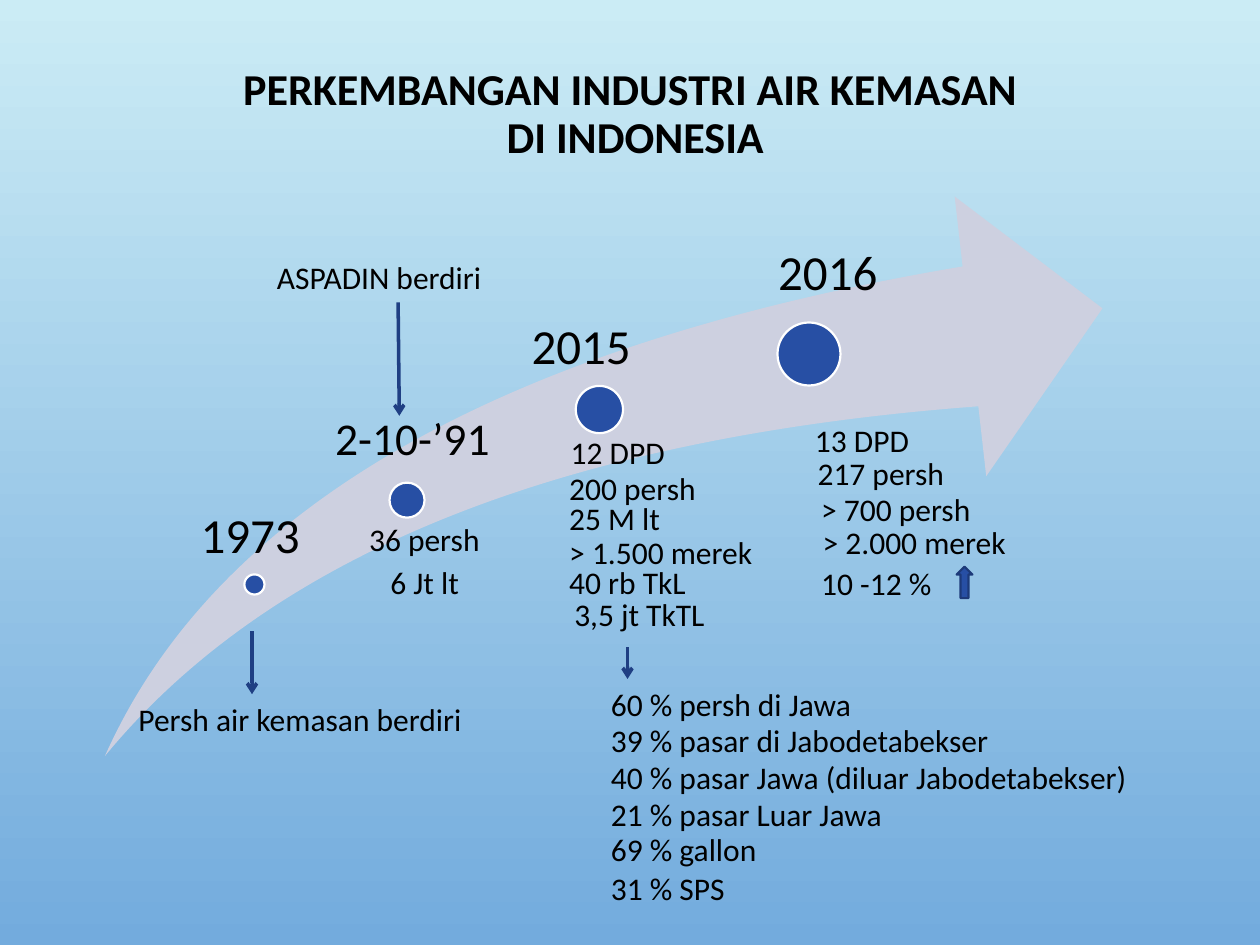
from dataclasses import dataclass

import pptx
import pptx.util
import pptx.dml.color
import pptx.enum.shapes
import pptx.enum.text
import pptx.oxml
import pptx.oxml.ns

Pt = pptx.util.Pt
SHAPE = pptx.enum.shapes.MSO_SHAPE
ALIGN = pptx.enum.text.PP_ALIGN
FIT = pptx.enum.text.MSO_AUTO_SIZE
ANCHOR = pptx.enum.text.MSO_ANCHOR
BLACK, BLUE, WHITE = "000000", "274FA4", "FFFFFF"


@dataclass
class Stage:
    year: str
    left: float
    top: float
    width: float
    height: float
    inset: float
    size: float
    align: ALIGN
    dot_x: float
    dot_y: float
    dot: float


@dataclass
class Label:
    text: str
    left: float
    top: float
    width: float


@dataclass
class Arrow:
    x1: float
    y1: float
    x2: float
    y2: float


STAGES = [
    Stage("1973", 108, 292.3, 63.4, 31.7, 6.5, 28, ALIGN.CENTER, 145.4, 334, 11.5),
    Stage("2-10-’91", 180.7, 237.6, 107.3, 48, 10.8, 26, ALIGN.LEFT, 232.6, 285.8, 20),
    Stage("2015", 289.4, 184.3, 107.3, 36, 14.4, 28, ALIGN.LEFT, 342.5, 234, 27),
    Stage("2016", 409.7, 141.8, 107.3, 39, 19.4, 28, ALIGN.CENTER, 462.3, 202.3, 36),
]

LABELS = [
    Label("ASPADIN berdiri", 151.2, 144, 148.3),
    Label("Persh air kemasan berdiri", 72, 396.7, 221.8),
    Label("36 persh", 203.8, 293.8, 85),
    Label("6 Jt lt", 216, 318.2, 58.3),
    Label("12 DPD", 319, 244.1, 78.5),
    Label("200 persh", 318.2, 264.2, 95),
    Label("25 M lt", 318.2, 281.5, 69.1),
    Label("> 1.500 merek", 318.2, 301, 131),
    Label("40 rb TkL", 318.2, 318.2, 90.7),
    Label("3,5 jt TkTL", 321.1, 336.2, 110.2),
    Label("13 DPD", 458.6, 236.9, 78.5),
    Label("217 persh", 460.1, 255.6, 95),
    Label("> 700 persh", 462.2, 276.5, 110.9),
    Label("> 2.000 merek", 463, 295.2, 131),
    Label("10 -12 %", 462.2, 319, 92.2),
    Label("60 % persh di Jawa", 342, 388.1, 172.8),
    Label("39 % pasar di Jabodetabekser", 342, 408.2, 260),
    Label("40 % pasar Jawa (diluar Jabodetabekser)", 342, 429.8, 350),
    Label("21 % pasar Luar Jawa", 342, 450.7, 200.2),
    Label("69 % gallon", 342, 470.9, 109.4),
    Label("31 % SPS", 342, 493.2, 102.2),
]

ARROWS = [
    Arrow(227.5, 172.8, 228.2, 237.6),
    Arrow(144, 360.7, 144, 396.7),
    Arrow(358.6, 370, 358.6, 388),
]


def tint(spot, code: str) -> None:
    spot.rgb = pptx.dml.color.RGBColor.from_string(code)


def style(para, size: float, bold: bool = False) -> None:
    for run in para.runs:
        run.font.name = "Calibri"
        run.font.size = Pt(size)
        run.font.bold = bold
        tint(run.font.color, BLACK)


def add_form(slide, kind, left: float, top: float, width: float, height: float,
             fill: str, line: str = ""):
    form = slide.shapes.add_shape(kind, Pt(left), Pt(top), Pt(width), Pt(height))
    form.shadow.inherit = False
    form.fill.solid()
    tint(form.fill.fore_color, fill)
    if line:
        tint(form.line.color, line)
        form.line.width = Pt(1.25)
    else:
        form.line.fill.background()
    return form


def add_stage(slide, stage: Stage) -> None:
    half = stage.dot / 2
    add_form(slide, SHAPE.OVAL, stage.dot_x - half, stage.dot_y - half,
             stage.dot, stage.dot, BLUE, WHITE)
    box = slide.shapes.add_textbox(Pt(stage.left), Pt(stage.top),
                                   Pt(stage.width), Pt(stage.height))
    frame = box.text_frame
    frame.word_wrap = True
    frame.margin_left = Pt(stage.inset)
    frame.margin_top = frame.margin_right = frame.margin_bottom = 0
    frame.text = stage.year
    para = frame.paragraphs[0]
    para.alignment = stage.align
    para.line_spacing = 0.9
    style(para, stage.size)


def add_label(slide, label: Label) -> None:
    box = slide.shapes.add_textbox(Pt(label.left), Pt(label.top), Pt(label.width), Pt(29))
    frame = box.text_frame
    frame.word_wrap = False
    frame.auto_size = FIT.SHAPE_TO_FIT_TEXT
    frame.text = label.text
    style(frame.paragraphs[0], 18)


def add_arrow(slide, arrow: Arrow) -> None:
    line = slide.shapes.add_connector(pptx.enum.shapes.MSO_CONNECTOR.STRAIGHT,
                                      Pt(arrow.x1), Pt(arrow.y1), Pt(arrow.x2), Pt(arrow.y2))
    tint(line.line.color, "1F3F83")
    line.line.width = Pt(2)
    space = pptx.oxml.ns.nsdecls("a")
    head = pptx.oxml.parse_xml(f'<a:tailEnd {space} type="arrow"/>')
    line.line._get_or_add_ln().append(head)
    line._element.spPr.append(pptx.oxml.parse_xml(f"<a:effectLst {space}/>"))


def add_title(slide) -> None:
    title = slide.shapes.title
    title.left, title.top = Pt(6), Pt(36)
    title.width, title.height = Pt(714), Pt(60)
    frame = title.text_frame
    frame.word_wrap = True
    frame.auto_size = FIT.NONE
    frame.vertical_anchor = ANCHOR.MIDDLE
    frame.text = "PERKEMBANGAN INDUSTRI AIR KEMASAN \vDI INDONESIA"
    para = frame.paragraphs[0]
    para.alignment = ALIGN.CENTER
    para.line_spacing = 0.9
    style(para, 25.2, True)


def paint_back(slide) -> None:
    fill = slide.background.fill
    fill.gradient()
    fill.gradient_angle = 270
    for stop, code, place in zip(fill.gradient_stops, ("CBECF5", "73ABDD"), (0, 1)):
        tint(stop.color, code)
        stop.position = place


def main() -> None:
    deck = pptx.Presentation()
    deck.slide_width, deck.slide_height = Pt(720), Pt(540)
    slide = deck.slides.add_slide(deck.slide_layouts[5])
    paint_back(slide)
    add_title(slide)
    swoosh = add_form(slide, SHAPE.SWOOSH_ARROW, 60, 112.3, 570, 319.7, "CDD0E0")
    swoosh.adjustments[0] = swoosh.adjustments[1] = 0.25
    for stage in STAGES:
        add_stage(slide, stage)
    for label in LABELS:
        add_label(slide, label)
    growth = add_form(slide, SHAPE.RIGHT_ARROW, 542.2, 328.3, 18, 9, BLUE, "1D3A79")
    growth.rotation = 270
    for arrow in ARROWS:
        add_arrow(slide, arrow)
    deck.save("out.pptx")


if __name__ == "__main__":
    main()
